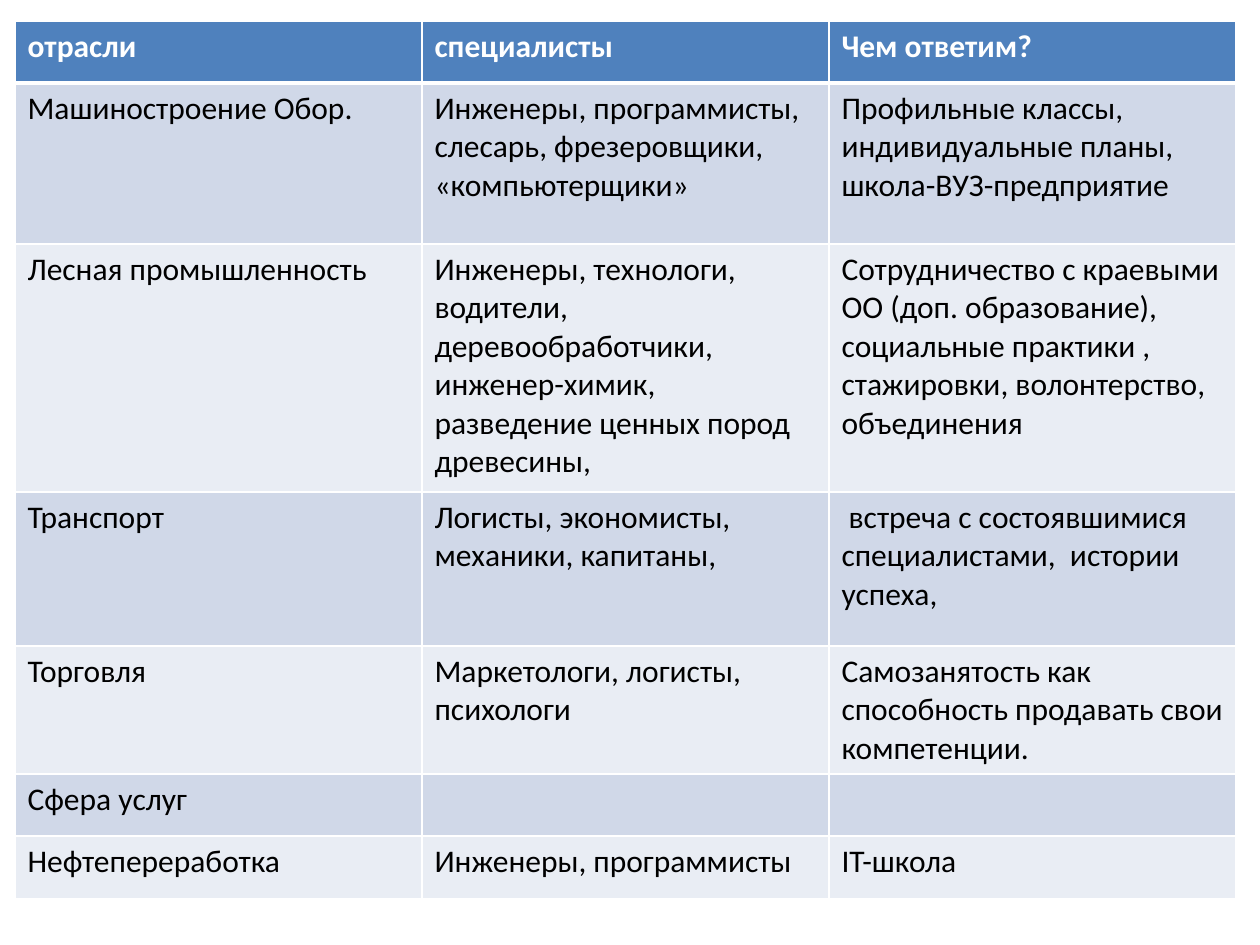
from lxml import etree
from pptx import Presentation
from pptx.dml.color import RGBColor
from pptx.oxml.ns import qn
from pptx.util import Emu, Pt

PX = 914400 // 126
COLORS = {
    "header": "4F81BD",
    "odd": "D0D8E8",
    "even": "E9EDF4",
    "border": "FFFFFF",
    "header_text": "FFFFFF",
    "body_text": "000000",
}
FONT = {"name": "Calibri", "size": Pt(18)}

TABLE_LEFT, TABLE_TOP = 15, 21
COLUMN_WIDTH = 407
ROW_HEIGHTS = [62, 161, 248, 154, 128, 62, 63]
ROWS = [
    ("отрасли", "специалисты", "Чем ответим?"),
    ("Машиностроение Обор.",
     "Инженеры, программисты, слесарь, фрезеровщики, «компьютерщики»",
     "Профильные классы, индивидуальные планы, школа-ВУЗ-предприятие"),
    ("Лесная промышленность",
     "Инженеры, технологи, водители, деревообработчики, инженер-химик, "
     "разведение ценных пород древесины,",
     "Сотрудничество с краевыми ОО (доп. образование), "
     "социальные практики , стажировки, волонтерство, объединения"),
    ("Транспорт",
     "Логисты, экономисты, механики, капитаны,",
     " встреча с состоявшимися специалистами,  истории успеха,"),
    ("Торговля",
     "Маркетологи, логисты, психологи",
     "Самозанятость как способность продавать свои компетенции."),
    ("Сфера услуг", "", ""),
    ("Нефтепереработка", "Инженеры, программисты", "IT-школа"),
]


def px(count):
    return Emu(count * PX)


def color(name):
    return RGBColor.from_string(COLORS[name])


def set_borders(cell, widths):
    properties = cell._tc.get_or_add_tcPr()
    for side, width in widths.items():
        line = etree.SubElement(properties, qn(f"a:ln{side}"), w=str(Pt(width)))
        fill = etree.SubElement(line, qn("a:solidFill"))
        etree.SubElement(fill, qn("a:srgbClr"), val=COLORS["border"])


def fill_cell(cell, text, row_number):
    is_header = row_number == 0
    # Borders come before the fill in the cell properties
    set_borders(cell, {"L": 1, "R": 1,
                       "T": 3 if row_number == 1 else 1,
                       "B": 3 if is_header else 1})
    band = "header" if is_header else "odd" if row_number % 2 else "even"
    cell.fill.solid()
    cell.fill.fore_color.rgb = color(band)

    para = cell.text_frame.paragraphs[0]
    para.text = text
    for font in [para.font] + [span.font for span in para.runs]:
        for name, value in {**FONT, "bold": is_header}.items():
            setattr(font, name, value)
        font.color.rgb = color("header_text" if is_header else "body_text")


def add_industry_table(page):
    column_count = len(ROWS[0])
    table = page.shapes.add_table(
        len(ROWS), column_count, px(TABLE_LEFT), px(TABLE_TOP),
        px(COLUMN_WIDTH * column_count), px(sum(ROW_HEIGHTS))).table
    for column in table.columns:
        column.width = px(COLUMN_WIDTH)
    for row_number, (row, height) in enumerate(zip(table.rows, ROW_HEIGHTS)):
        row.height = px(height)
        for cell, text in zip(row.cells, ROWS[row_number]):
            fill_cell(cell, text, row_number)


def main():
    deck = Presentation()
    deck.slide_width, deck.slide_height = px(1260), px(945)
    page = deck.slides.add_slide(deck.slide_layouts[6])
    add_industry_table(page)
    deck.save("out.pptx")


if __name__ == "__main__":
    main()
